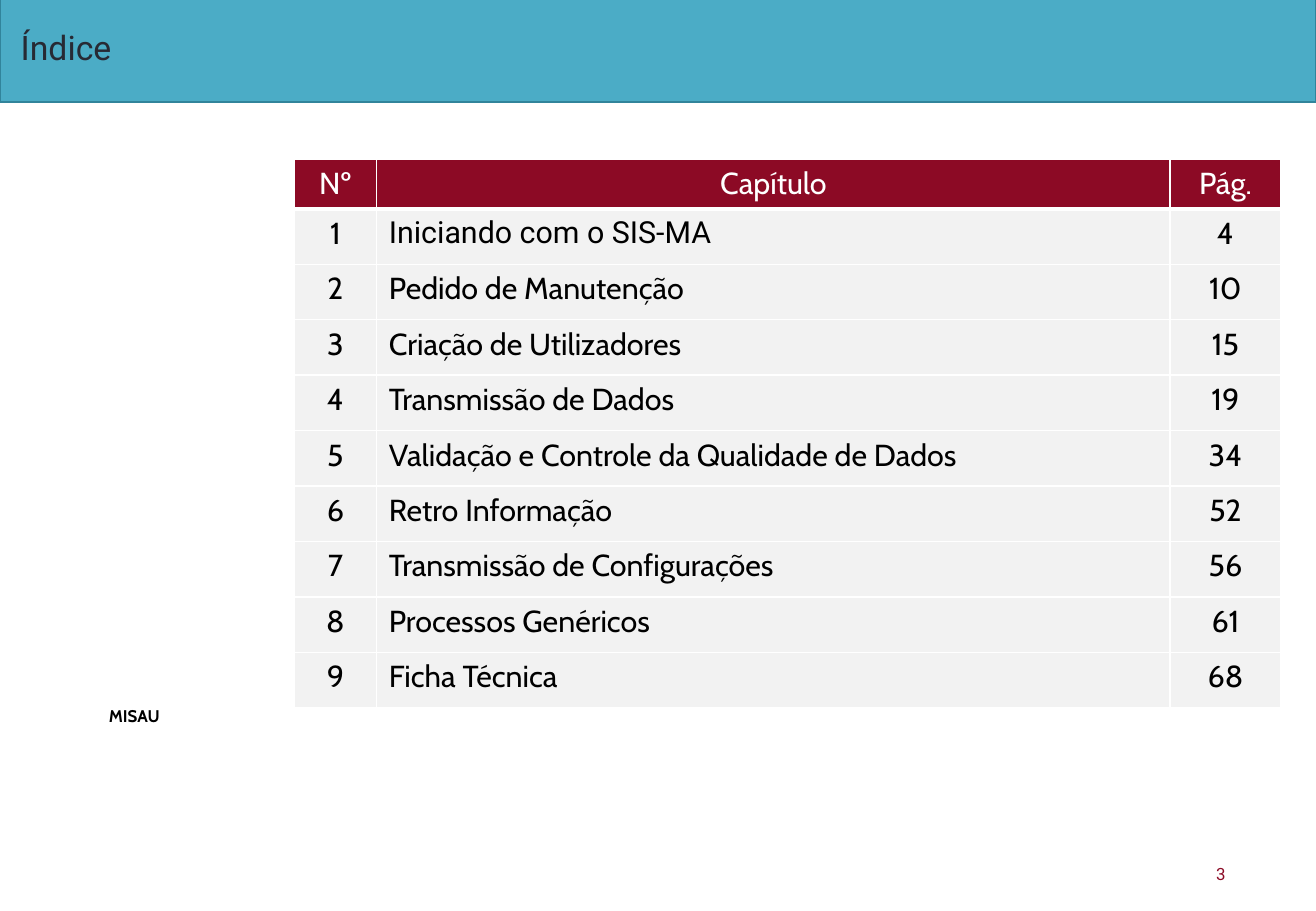
from lxml import etree
from pptx import Presentation
from pptx.dml.color import RGBColor
from pptx.enum.shapes import MSO_SHAPE
from pptx.enum.text import MSO_ANCHOR, PP_ALIGN
from pptx.oxml.ns import qn
from pptx.util import Inches, Pt

RECTANGLE = MSO_SHAPE.RECTANGLE
TOP, MIDDLE = MSO_ANCHOR.TOP, MSO_ANCHOR.MIDDLE
LEFT, CENTER, JUSTIFY = PP_ALIGN.LEFT, PP_ALIGN.CENTER, PP_ALIGN.JUSTIFY

BLACK, WHITE, INK = "000000", "FFFFFF", "272A34"
TEAL, TEAL_EDGE = "4BACC6", "31849B"
WINE, HEADER_WINE, ROW_GREY = "8C0B26", "8C0A25", "F2F2F2"

HEADINGS = ("Nº", "Capítulo", "Pág.")
CHAPTERS = [
    ("Iniciando com o SIS-MA", 4),
    ("Pedido de Manutenção", 10),
    ("Criação de Utilizadores", 15),
    ("Transmissão de Dados", 19),
    ("Validação e Controle da Qualidade de Dados", 34),
    ("Retro Informação", 52),
    ("Transmissão de Configurações", 56),
    ("Processos Genéricos", 61),
    ("Ficha Técnica", 68),
]
COLUMN_WIDTHS = (0.68, 6.53, 0.91)
TABLE_HEIGHT, HEADER_HEIGHT = 4.52, 0.41


def rgb(color):
    return RGBColor.from_string(color)


def write(frame, text, size=18, font="Cabin", color=BLACK, bold=False,
          align=LEFT, anchor=TOP, inset=(0.1, 0.05)):
    """Fill a text frame or table cell; inset is (horizontal, vertical) in inches."""
    frame.margin_left = frame.margin_right = Inches(inset[0])
    frame.margin_top = frame.margin_bottom = Inches(inset[1])
    frame.vertical_anchor = anchor
    frame.word_wrap = True
    paragraph = frame.paragraphs[0]
    paragraph.alignment = align
    run = paragraph.add_run()
    run.text = text
    run.font.size = Pt(size)
    run.font.name = font
    run.font.bold = bold
    run.font.color.rgb = rgb(color)


prs = Presentation()
prs.slide_width, prs.slide_height = Inches(10.83), Inches(7.5)
slide = prs.slides.add_slide(prs.slide_layouts[6])
shapes = slide.shapes

# Title band
band = shapes.add_shape(RECTANGLE, 0, Inches(-0.04), prs.slide_width, Inches(0.88))
band.shadow.inherit = False
band.fill.solid()
band.fill.fore_color.rgb = rgb(TEAL)
band.line.color.rgb = rgb(TEAL_EDGE)
band.line.width = Pt(0.75)

title = shapes.add_textbox(Inches(0.14), 0, Inches(8.98), Inches(0.78))
write(title.text_frame, "Índice", size=20, font="Roboto", color=INK,
      anchor=MIDDLE, inset=(0.03, 0.03))

# Footer
ministry = shapes.add_textbox(Inches(0.61), Inches(5.76), Inches(0.99), Inches(0.27))
write(ministry.text_frame, "MISAU", size=10, bold=True, align=CENTER)

page_number = shapes.add_textbox(Inches(9.91), Inches(7.06), Inches(0.63), Inches(0.27))
write(page_number.text_frame, "3", size=10, font="Roboto", color=WINE)

# Table of contents
index = shapes.add_table(len(CHAPTERS) + 1, len(HEADINGS), Inches(2.42), Inches(1.31),
                         Inches(sum(COLUMN_WIDTHS)), Inches(TABLE_HEIGHT)).table
index.horz_banding = False
for column, width in zip(index.columns, COLUMN_WIDTHS):
    column.width = Inches(width)
for row in index.rows:
    row.height = Inches((TABLE_HEIGHT - HEADER_HEIGHT) / len(CHAPTERS))
index.rows[0].height = Inches(HEADER_HEIGHT)

contents = [HEADINGS] + [(str(number), chapter, str(page))
                         for number, (chapter, page) in enumerate(CHAPTERS, 1)]
for r, entries in enumerate(contents):
    is_header = r == 0
    for c, entry in enumerate(entries):
        cell = index.cell(r, c)
        align = JUSTIFY if c == 1 and not is_header else CENTER
        # The cell itself carries margins and anchor; its frame carries the text
        write(cell.text_frame, entry, align=align,
              font="Roboto" if (r, c) == (1, 1) else "Cabin",
              color=WHITE if is_header else BLACK)
        cell.margin_left = cell.margin_right = Inches(0.1)
        cell.margin_top = cell.margin_bottom = Inches(0.05)
        properties = cell._tc.get_or_add_tcPr()
        for side in ("lnL", "lnR", "lnT", "lnB"):
            on_header_rule = (r, side) in ((0, "lnB"), (1, "lnT"))
            border = etree.SubElement(properties, qn(f"a:{side}"),
                                      w=str(Pt(3 if on_header_rule else 1)))
            border_fill = etree.SubElement(border, qn("a:solidFill"))
            etree.SubElement(border_fill, qn("a:srgbClr"), val=WHITE)
        cell.fill.solid()
        cell.fill.fore_color.rgb = rgb(HEADER_WINE if is_header else ROW_GREY)

prs.save("out.pptx")
